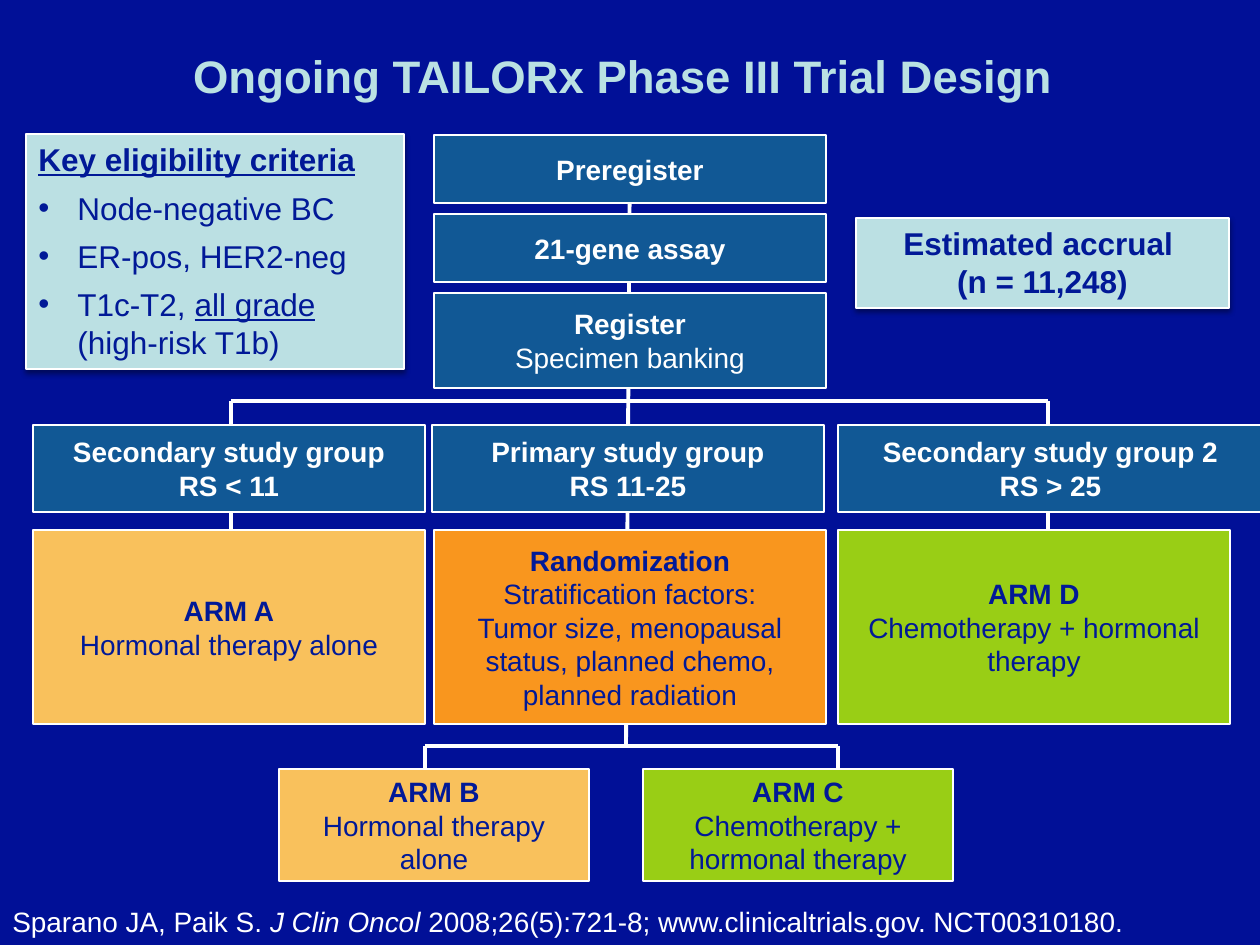
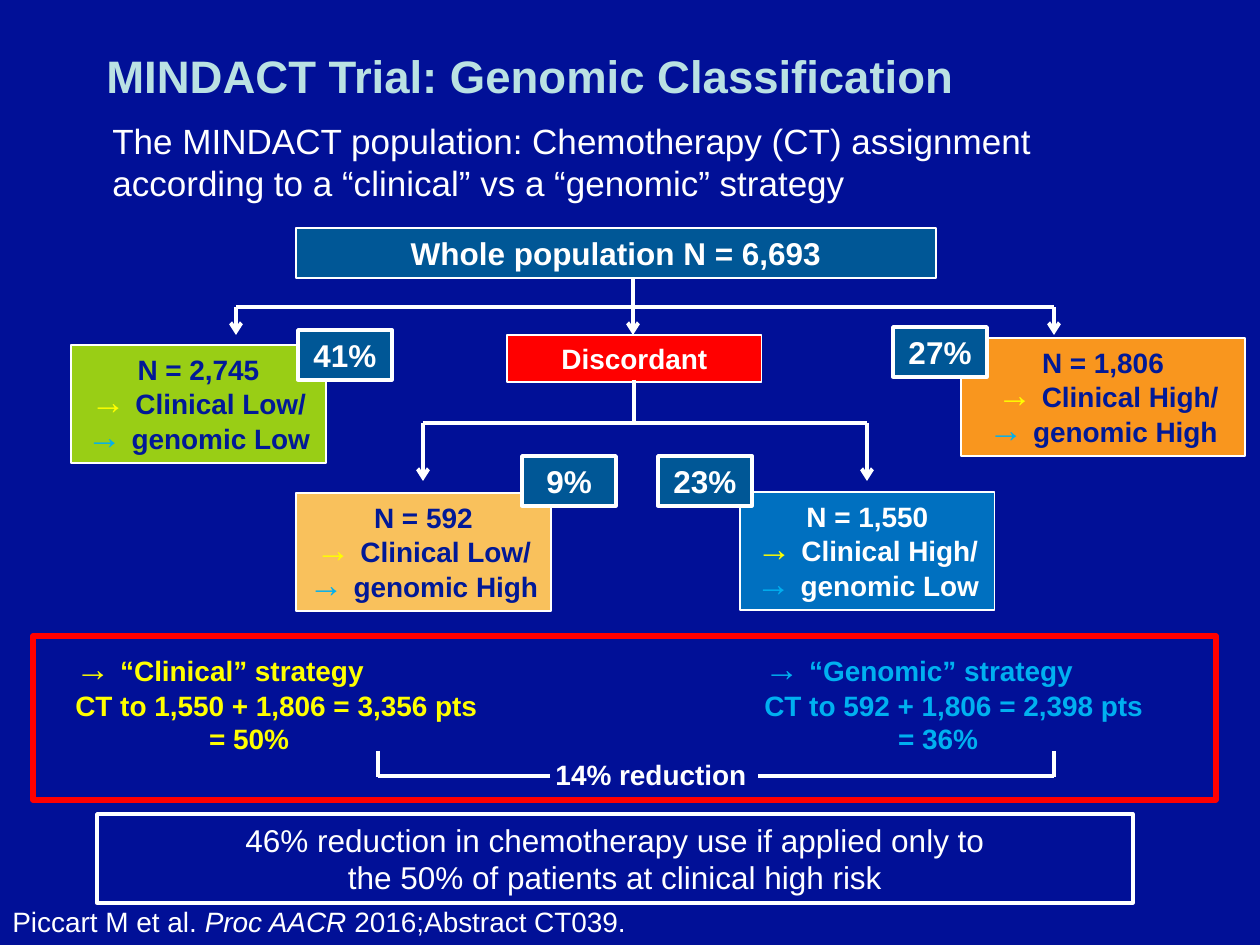
from copy import deepcopy

from lxml.etree import SubElement
from pptx import Presentation
from pptx.dml.color import RGBColor as RGB
from pptx.enum.shapes import MSO_CONNECTOR as CONNECTOR, MSO_SHAPE as SHAPE
from pptx.enum.text import MSO_ANCHOR as ANCHOR, PP_ALIGN as ALIGN
from pptx.oxml.ns import qn
from pptx.util import Emu, Pt

PX_PER_INCH = 126
EMU_PER_PX = 914400 / PX_PER_INCH
SLIDE_WIDTH, SLIDE_HEIGHT = 1260, 945

NAVY = RGB(0x01, 0x10, 0x97)
INK = RGB(0x01, 0x19, 0x97)
WHITE = RGB(0xFF, 0xFF, 0xFF)
PALE_TITLE = RGB(0xBA, 0xE1, 0xE3)
PALE_PANEL = RGB(0xBB, 0xE0, 0xE3)
STEEL = RGB(0x11, 0x58, 0x95)
DEEP_BLUE = RGB(0x00, 0x57, 0x96)
MID_BLUE = RGB(0x00, 0x70, 0xC0)
SKY = RGB(0x00, 0xB0, 0xF0)
SAND = RGB(0xF9, 0xC1, 0x5C)
ORANGE = RGB(0xF9, 0x96, 0x1E)
LIME = RGB(0x99, 0xCE, 0x15)
RED = RGB(0xFF, 0x00, 0x00)
YELLOW = RGB(0xFF, 0xFF, 0x00)

PLAIN = {"name": "Arial", "size": Pt(16), "bold": False, "color": WHITE}
BOLD = {**PLAIN, "bold": True}
DARK = {**PLAIN, "color": INK}
DARK_BOLD = {**BOLD, "color": INK}
TITLE = {**BOLD, "size": Pt(26), "color": PALE_TITLE}
PANEL = {**DARK, "size": Pt(18)}
PANEL_BOLD = {**PANEL, "bold": True}
LARGE = {**PLAIN, "size": Pt(18)}
LARGE_BOLD = {**LARGE, "bold": True}
CENTER = {"alignment": ALIGN.CENTER}
SPACED = {"space_before": Pt(6)}
TIGHT = {**CENTER, "line_spacing": Pt(20)}


def px(length):
    return Emu(round(length * EMU_PER_PX))


def set_attributes(target, values):
    for name, value in values.items():
        if name == "color":
            target.color.rgb = value
        else:
            setattr(target, name, value)


def add_run(paragraph, text, font):
    for index, line in enumerate(text.split("\n")):
        if index:
            paragraph.add_line_break()
            line_break = paragraph._p.findall(qn("a:br"))[-1]
        run = paragraph.add_run()
        run.text = line
        set_attributes(run.font, font)
        if index:
            line_break.append(deepcopy(run._r.find(qn("a:rPr"))))
        if not line:
            paragraph._p.remove(run._r)


def fill_text(shape, paragraphs, paragraph_format, anchor):
    frame = shape.text_frame
    set_attributes(frame, {"word_wrap": True, "vertical_anchor": anchor})
    for index, runs in enumerate(paragraphs):
        paragraph = frame.add_paragraph() if index else frame.paragraphs[0]
        set_attributes(paragraph, paragraph_format)
        for text, font in runs:
            add_run(paragraph, text, font)
    return shape


def add_text(slide, area, paragraphs, paragraph_format={}, anchor=ANCHOR.TOP):
    text_box = slide.shapes.add_textbox(*map(px, area))
    return fill_text(text_box, paragraphs, paragraph_format, anchor)


def add_box(slide, area, fill, paragraphs=(), paragraph_format=CENTER,
            anchor=ANCHOR.MIDDLE, line=WHITE, line_width=0.75):
    shape = slide.shapes.add_shape(SHAPE.RECTANGLE, *map(px, area))
    shape.shadow.inherit = False
    if fill is None:
        shape.fill.background()
    else:
        shape.fill.solid()
        shape.fill.fore_color.rgb = fill
    set_attributes(shape.line, {"color": line, "width": Pt(line_width)})
    return fill_text(shape, paragraphs, paragraph_format, anchor)


def add_panel(slide, area, paragraphs, paragraph_format):
    panel = add_box(slide, area, PALE_PANEL, paragraphs, paragraph_format,
                    ANCHOR.TOP, line_width=1.5)
    effects = panel._element.spPr.find(qn("a:effectLst"))
    shadow = SubElement(effects, qn("a:outerShdw"), blurRad=str(Pt(3.1)),
                        dist=str(Pt(1.6)), dir="5400000", rotWithShape="0")
    color = SubElement(shadow, qn("a:srgbClr"), val="000000")
    SubElement(color, qn("a:alpha"), val="38000")
    return panel


def add_bullet(paragraph, indent=39):
    properties = paragraph._p.get_or_add_pPr()
    properties.set("marL", str(px(indent)))
    properties.set("indent", str(-px(indent)))
    SubElement(properties, qn("a:buFont"), typeface="Arial")
    SubElement(properties, qn("a:buChar"), char="•")


def add_line(slide, start, end, arrow=False):
    connector = slide.shapes.add_connector(
        CONNECTOR.STRAIGHT, *map(px, (*start, *end)))
    set_attributes(connector.line, {"color": WHITE, "width": Pt(2.25)})
    properties = connector._element.spPr
    if arrow:
        SubElement(properties.find(qn("a:ln")), qn("a:tailEnd"), type="arrow")
    SubElement(properties, qn("a:effectLst"))


def add_fork(slide, bar_y, branches, end_y, arrow=False):
    add_line(slide, (branches[0], bar_y), (branches[-1], bar_y))
    for x in branches:
        add_line(slide, (x, bar_y), (x, end_y), arrow)


def add_slide(presentation, title, title_align, citation):
    slide = presentation.slides.add_slide(presentation.slide_layouts[6])
    slide.background.fill.solid()
    slide.background.fill.fore_color.rgb = NAVY
    add_text(slide, (94, 0, 1071, 158), [[(title, TITLE)]],
             {"alignment": title_align, "line_spacing": 0.9}, ANCHOR.MIDDLE)
    authors, journal, reference = citation
    add_text(slide, (0, 898, 1232, 47), [[
        (authors, PLAIN), (journal, {**PLAIN, "italic": True}),
        (reference, PLAIN)]])
    return slide


def add_arm(slide, area, fill, name, therapy):
    add_box(slide, area, fill, [[(name + "\n", DARK_BOLD), (therapy, DARK)]])


def add_eligibility(slide):
    underlined = {"underline": True}
    panel = add_panel(slide, (26, 134, 378, 235), [
        [("Key eligibility criteria", {**PANEL_BOLD, **underlined})],
        [("Node-negative BC", PANEL)],
        [("ER-pos, HER2-neg", PANEL)],
        [("T1c-T2, ", PANEL), ("all grade", {**PANEL, **underlined}),
         (" \n(high-risk T1b)", PANEL)],
    ], {**SPACED, "alignment": ALIGN.LEFT})
    for paragraph in panel.text_frame.paragraphs[1:]:
        add_bullet(paragraph)


def build_trial_design(presentation):
    slide = add_slide(
        presentation, "Ongoing TAILORx Phase III Trial Design ", ALIGN.CENTER,
        ("Sparano JA, Paik S. ", "J Clin Oncol ",
         "2008;26(5):721-8; www.clinicaltrials.gov. NCT00310180."))
    add_line(slide, (630, 137), (626, 746))
    add_fork(slide, 401, (231, 1048), 530)
    add_fork(slide, 746, (425, 838), 830)

    add_eligibility(slide)
    add_panel(slide, (856, 218, 373, 90),
              [[("Estimated accrual \n(n = 11,248)", PANEL_BOLD)]],
              {**SPACED, **CENTER})

    steps = [(135, 68, "Preregister", ""), (214, 68, "21-gene assay", ""),
             (293, 95, "Register", "\nSpecimen banking")]
    for top, height, step, detail in steps:
        add_box(slide, (434, top, 392, height), STEEL,
                [[(step, BOLD), (detail, PLAIN)]])

    groups = [(33, 392, "Secondary study group\nRS < 11"),
              (432, 392, "Primary study group\nRS 11-25"),
              (838, 425, "Secondary study group 2\nRS > 25")]
    for left, width, group in groups:
        add_box(slide, (left, 425, width, 87), STEEL, [[(group, BOLD)]])

    arm_top, arm_height = 530, 194
    add_arm(slide, (33, arm_top, 392, arm_height), SAND,
            "ARM A", "Hormonal therapy alone")
    add_box(slide, (434, arm_top, 392, arm_height), ORANGE, [
        [("Randomization", DARK_BOLD)],
        [("Stratification factors:\nTumor size, menopausal status, "
          "planned chemo, planned radiation", DARK)]])
    add_arm(slide, (838, arm_top, 392, arm_height), LIME,
            "ARM D", "Chemotherapy + hormonal therapy")
    add_arm(slide, (279, 769, 310, 112), SAND,
            "ARM B", "Hormonal therapy alone")
    add_arm(slide, (643, 769, 310, 112), LIME,
            "ARM C", "Chemotherapy + hormonal therapy")


def add_risk_group(slide, area, fill, color, count, clinical, genomic,
                   lead=""):
    font = {**BOLD, "color": color}
    arrow = {**BOLD, "size": Pt(20)}
    add_box(slide, area, fill, [
        [(f"N = {count}\n", font),
         (lead + "→ ", {**arrow, "color": YELLOW}),
         (f"Clinical {clinical}/", font)],
        [("→ ", {**arrow, "color": SKY}), (f"genomic {genomic}", font)],
    ], TIGHT, ANCHOR.TOP)


def add_strategy(slide, left, color, name, total, share):
    font = {**BOLD, "color": color}
    add_text(slide, (left, 640, 440, 123), [
        [("→ ", {**font, "size": Pt(20)}), (f"“{name}” strategy", font)],
        [(f"CT to {total} pts", font)],
        [(f"\t\t = {share}", font)]])


def build_classification(presentation):
    slide = add_slide(
        presentation, "MINDACT Trial: Genomic Classification", ALIGN.LEFT,
        ("Piccart M et al. ", "Proc AACR", " 2016;Abstract CT039."))
    add_text(slide, (100, 113, 1034, 97), [[
        ("The MINDACT population: Chemotherapy (CT) assignment according to "
         "a “clinical” vs a “genomic” strategy",
         {**PLAIN, "size": Pt(20)})]])

    add_box(slide, (296, 228, 640, 50), DEEP_BLUE,
            [[("Whole population N = 6,693", LARGE_BOLD)]])
    add_box(slide, (507, 335, 255, 47), RED, [[("Discordant", BOLD)]])
    add_line(slide, (633, 278), (633, 307))
    add_fork(slide, 307, (236, 633, 1054), 335, arrow=True)
    add_line(slide, (634, 380), (634, 423))
    add_fork(slide, 423, (423, 867), 481, arrow=True)

    add_risk_group(slide, (71, 345, 255, 118), LIME, INK,
                   "2,745", "Low", "Low")
    add_risk_group(slide, (961, 338, 284, 118), ORANGE, INK,
                   "1,806", "High", "High", lead=" ")
    add_risk_group(slide, (296, 493, 255, 118), SAND, INK,
                   "592", "Low", "High")
    add_risk_group(slide, (740, 492, 255, 118), MID_BLUE, WHITE,
                   "1,550", "High", "Low")

    shares = [(298, 330, "41%"), (522, 456, "9%"),
              (658, 456, "23%"), (893, 327, "27%")]
    for left, top, share in shares:
        add_box(slide, (left, top, 94, 50), DEEP_BLUE,
                [[(share, LARGE_BOLD)]], line_width=2)

    add_box(slide, (33, 636, 1183, 164), None, line=RED, line_width=3)
    add_strategy(slide, 63, YELLOW, "Clinical", "1,550 + 1,806 = 3,356", "50%")
    add_strategy(slide, 752, SKY, "Genomic", "592 + 1,806 = 2,398", "36%")
    add_text(slide, (431, 751, 440, 47), [[("14% reduction", BOLD)]], CENTER)
    for outer, inner in ((378, 550), (1054, 758)):
        add_line(slide, (outer, 776), (inner, 776))
        add_line(slide, (outer, 751), (outer, 777))

    add_box(slide, (97, 814, 1036, 89), None, [[
        ("46% reduction in chemotherapy use if applied only to\n"
         " the 50% of patients at clinical high risk ", LARGE)]],
        line_width=2)


def main():
    presentation = Presentation()
    presentation.slide_width = px(SLIDE_WIDTH)
    presentation.slide_height = px(SLIDE_HEIGHT)
    build_trial_design(presentation)
    build_classification(presentation)
    presentation.save("out.pptx")


if __name__ == "__main__":
    main()
